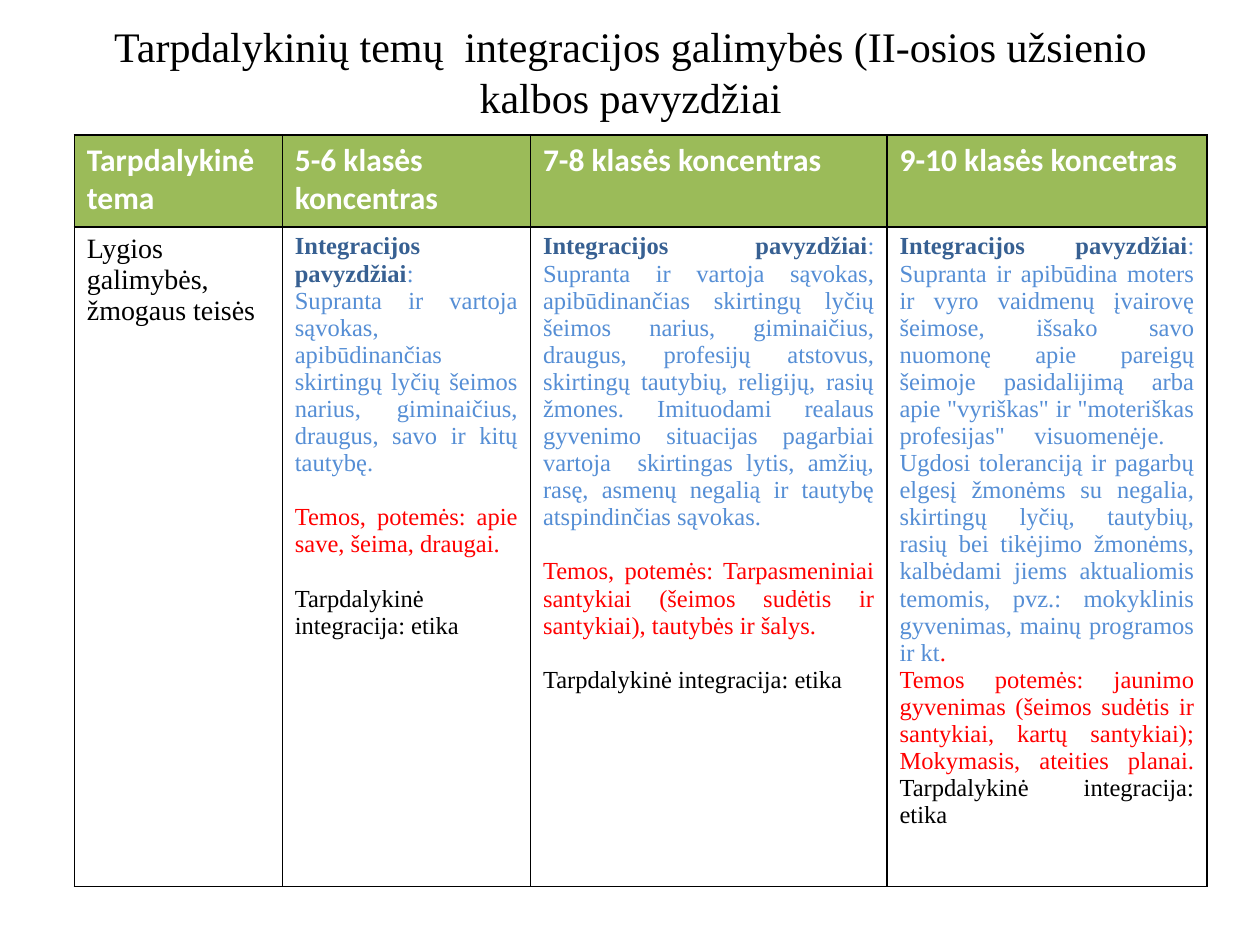
import pptx
import pptx.util
import pptx.dml.color
import pptx.enum.text
import pptx.oxml
import pptx.oxml.ns

Inches, Pt = pptx.util.Inches, pptx.util.Pt
ALIGN = pptx.enum.text.PP_ALIGN
SERIF, SANS = "Times New Roman", "Calibri"
BLACK, WHITE, GREEN = "000000", "FFFFFF", "9BBB59"
NAVY, BLUE, RED = "376092", "558ED5", "FF0000"

TITLE = "Tarpdalykinių temų  integracijos galimybės (II-osios užsienio kalbos pavyzdžiai"
HEADERS = ["Tarpdalykinė tema", "5-6 klasės koncentras",
           "7-8 klasės koncentras", "9-10 klasės koncetras"]
TOPIC = "Lygios galimybės, žmogaus teisės"
EXAMPLES = ("Integracijos pavyzdžiai", NAVY)
ETHICS = ("Tarpdalykinė integracija: etika", BLACK)

# Each paragraph: (lines of space before, runs)
CONTENT = [
    [(0, [EXAMPLES, (": ", BLUE)]),
     (0, [("Supranta ir vartoja sąvokas, apibūdinančias skirtingų lyčių šeimos narius, "
           "giminaičius, draugus, savo ir kitų tautybę. ", BLUE)]),
     (1, [("Temos, potemės: apie save, šeima, draugai. ", RED)]),
     (1, [ETHICS])],
    [(0, [EXAMPLES,
          (": Supranta ir vartoja sąvokas, apibūdinančias skirtingų lyčių šeimos narius, "
           "giminaičius, draugus, profesijų atstovus, skirtingų tautybių, religijų, rasių "
           "žmones. Imituodami realaus gyvenimo situacijas pagarbiai vartoja  skirtingas "
           "lytis, amžių, rasę, asmenų negalią ir tautybę atspindinčias sąvokas.  ", BLUE)]),
     (1, [("Temos, potemės: Tarpasmeniniai santykiai (šeimos sudėtis ir santykiai), "
           "tautybės ir šalys.", RED)]),
     (1, [ETHICS])],
    [(0, [EXAMPLES,
          (": Supranta ir apibūdina moters ir vyro vaidmenų įvairovę šeimose, išsako savo "
           "nuomonę apie pareigų šeimoje pasidalijimą arba apie \"vyriškas\" ir \"moteriškas "
           "profesijas\" visuomenėje.  Ugdosi toleranciją ir pagarbų elgesį žmonėms su "
           "negalia, skirtingų lyčių, tautybių, rasių bei tikėjimo žmonėms, kalbėdami jiems "
           "aktualiomis temomis, pvz.: mokyklinis gyvenimas, mainų programos ir kt", BLUE),
          (".  ", RED)]),
     (0, [("Temos potemės: jaunimo gyvenimas (šeimos sudėtis ir santykiai, kartų "
           "santykiai); Mokymasis, ateities planai. ", RED), ETHICS])],
]
COLS = [1.65, 1.97, 2.83, 2.54]
ROWS = [0.73, 4.83]
LINE = 15.5


def rgb(value):
    return pptx.dml.color.RGBColor.from_string(value)


def write(tf, paragraphs, size, font=SERIF, bold=False, align=ALIGN.LEFT):
    for i, (gap, runs) in enumerate(paragraphs):
        p = tf.add_paragraph() if i else tf.paragraphs[0]
        p.alignment = align
        p.space_before = Pt(gap * LINE)
        p.font.size, p.font.name = Pt(size), font
        for text, color in runs:
            r = p.add_run()
            r.text = text
            r.font.size, r.font.name = Pt(size), font
            r.font.bold = bold or color == NAVY
            r.font.color.rgb = rgb(color)


def style_cell(cell, fill):
    pr = cell._tc.get_or_add_tcPr()
    for side in ("lnL", "lnR", "lnT", "lnB"):
        pr.append(pptx.oxml.parse_xml(
            f'<a:{side} {pptx.oxml.ns.nsdecls("a")} w="12700"><a:solidFill>'
            f'<a:srgbClr val="{BLACK}"/></a:solidFill></a:{side}>'))
    if fill:
        cell.fill.solid()
        cell.fill.fore_color.rgb = rgb(fill)
    else:
        cell.fill.background()


prs = pptx.Presentation()
prs.slide_width, prs.slide_height = Inches(10), Inches(7.5)
s = prs.slides.add_slide(prs.slide_layouts[6])

tf = s.shapes.add_textbox(Inches(0.51), Inches(0.21), Inches(8.99), Inches(0.71)).text_frame
tf.word_wrap = True
tf.vertical_anchor = pptx.enum.text.MSO_ANCHOR.MIDDLE
write(tf, [(0, [(TITLE, BLACK)])], 24, align=ALIGN.CENTER)

table = s.shapes.add_table(len(ROWS), len(COLS), Inches(0.59), Inches(1.07),
                           Inches(sum(COLS)), Inches(sum(ROWS))).table
table.first_row = table.horz_banding = False
for col, width in zip(table.columns, COLS):
    col.width = Inches(width)
for row, height in zip(table.rows, ROWS):
    row.height = Inches(height)

for c, header in enumerate(HEADERS):
    head, body = table.cell(0, c), table.cell(1, c)
    style_cell(head, GREEN)
    style_cell(body, None)
    write(head.text_frame, [(0, [(header, WHITE)])], 18, SANS, bold=True)
    if c == 0:
        write(body.text_frame, [(0, [(TOPIC, BLACK)])], 16)
    else:
        write(body.text_frame, CONTENT[c - 1], 14, align=ALIGN.JUSTIFY)

prs.save("out.pptx")
